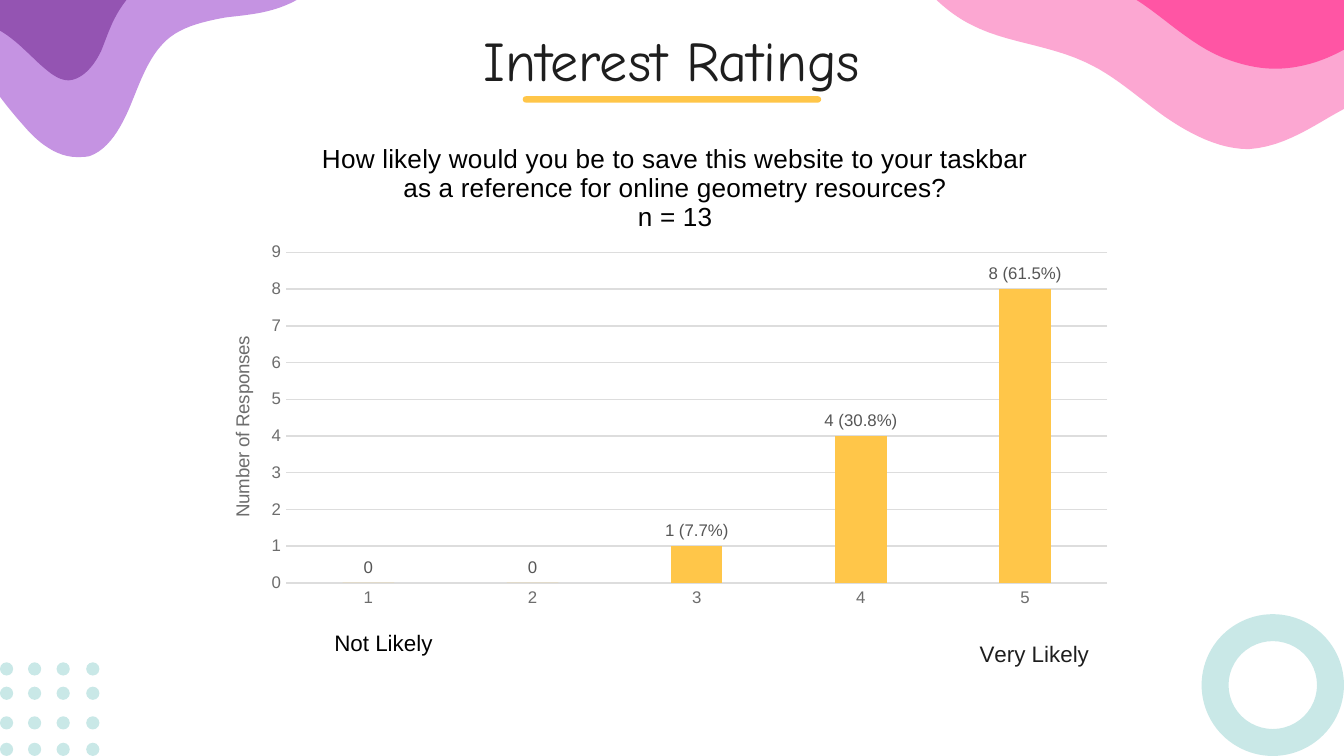
from lxml.etree import SubElement
from pptx import Presentation
from pptx.chart.data import CategoryChartData
from pptx.dml.color import RGBColor
from pptx.enum.chart import XL_CHART_TYPE as ChartType, XL_LABEL_POSITION as LabelPosition
from pptx.enum.chart import XL_TICK_MARK as TickMark
from pptx.enum.shapes import MSO_SHAPE as Shape
from pptx.enum.text import MSO_ANCHOR as Anchor, PP_ALIGN as Align
from pptx.oxml.ns import qn
from pptx.util import Cm, Pt

INK = RGBColor(0x1E, 0x1E, 0x1E)
BLACK = RGBColor(0, 0, 0)
AXIS_GRAY = RGBColor(0x6D, 0x6D, 0x6D)
LABEL_GRAY = RGBColor(0x56, 0x56, 0x56)
GRID_GRAY = RGBColor(0xDD, 0xDD, 0xDD)
YELLOW = RGBColor(0xFF, 0xC6, 0x49)
AQUA = RGBColor(0xC9, 0xE8, 0xE7)
LILAC = RGBColor(0xC5, 0x93, 0xE2)
PURPLE = RGBColor(0x94, 0x54, 0xB2)
LIGHT_PINK = RGBColor(0xFC, 0xA7, 0xD2)
PINK = RGBColor(0xFF, 0x55, 0xA4)


def style_font(font, size, color, name="Arial"):
    font.size, font.name, font.bold = Pt(size), name, False
    font.color.rgb = color


def place_chart_part(element, **fractions):
    layout = element.find(qn("c:layout"))
    if layout is None:
        layout = element.makeelement(qn("c:layout"))
        element.insert(0, layout)
    manual = SubElement(layout, qn("c:manualLayout"))
    if "w" in fractions:
        SubElement(manual, qn("c:layoutTarget")).set("val", "inner")
    for mode in ("xMode", "yMode"):
        SubElement(manual, qn(f"c:{mode}")).set("val", "edge")
    for name, fraction in fractions.items():
        SubElement(manual, qn(f"c:{name}")).set("val", str(fraction))


presentation = Presentation()
presentation.slide_width, presentation.slide_height = Cm(25.4), Cm(14.29)
slide = presentation.slides.add_slide(presentation.slide_layouts[5])
shapes = slide.shapes

# Each blob: colour, slide corner, point on the side edge, then Bezier triples.
blobs = [
    (LILAC, (0, 0), (0, 1.83), [
        (0.15, 2.03), (0.3, 2.21), (0.46, 2.39), (0.74, 2.72), (1.09, 2.97), (1.45, 2.97),
        (1.52, 2.97), (1.63, 2.97), (1.7, 2.95), (2.06, 2.82), (2.29, 2.41), (2.46, 2.01),
        (2.62, 1.63), (2.77, 1.17), (3.05, 0.86), (3.35, 0.51), (3.84, 0.41), (4.27, 0.33),
        (4.7, 0.28), (5.16, 0.25), (5.61, 0)]),
    (PURPLE, (0, 0), (0, 0.58), [
        (0.28, 0.74), (0.51, 0.99), (0.76, 1.22), (0.91, 1.35), (1.09, 1.52), (1.3, 1.52),
        (1.57, 1.5), (1.78, 1.24), (1.91, 0.97), (2.03, 0.69), (2.11, 0.36), (2.39, 0)]),
    (LIGHT_PINK, (25.4, 0), (25.4, 2.06), [
        (24.84, 2.36), (24.31, 2.77), (23.6, 2.82), (23.04, 2.82), (22.5, 2.54), (22.02, 2.21),
        (21.51, 1.85), (21.06, 1.42), (20.5, 1.17), (19.79, 0.84), (19, 0.81), (18.34, 0.46),
        (18.08, 0.33), (17.86, 0.15), (17.7, 0)]),
    (PINK, (25.4, 0), (25.4, 0.94), [
        (24.99, 1.17), (24.54, 1.3), (24.1, 1.3), (23.77, 1.3), (23.44, 1.22), (23.11, 1.09),
        (22.5, 0.84), (22, 0.33), (21.48, 0)]),
]
decorations = []
for color, corner, side, curve in blobs:
    outline = [side]
    for index in range(0, len(curve), 3):
        start = outline[-1]
        first, second, end = curve[index:index + 3]
        for step in range(1, 13):
            t = step / 12
            outline.append(tuple(
                (1 - t) ** 3 * a + 3 * (1 - t) ** 2 * t * b + 3 * (1 - t) * t ** 2 * c + t ** 3 * d
                for a, b, c, d in zip(start, first, second, end)))
    builder = shapes.build_freeform(Cm(corner[0]), Cm(corner[1]))
    builder.add_line_segments([(Cm(x), Cm(y)) for x, y in outline])
    decorations.append((builder.convert_to_shape(), color))

for left in (0, 0.53, 1.07, 1.63):
    for top in (12.52, 12.98, 13.54, 14.04):
        dot = shapes.add_shape(Shape.OVAL, Cm(left), Cm(top), Cm(0.25), Cm(0.25))
        decorations.append((dot, AQUA))

ring = shapes.add_shape(Shape.DONUT, Cm(22.71), Cm(11.61), Cm(2.69), Cm(2.68))
ring.adjustments[0] = 0.19
underline = shapes.add_shape(Shape.ROUNDED_RECTANGLE, Cm(9.88), Cm(1.82), Cm(5.64), Cm(0.12))
underline.adjustments[0] = 0.5
decorations += [(ring, AQUA), (underline, YELLOW)]
for shape, color in decorations:
    shape.shadow.inherit = False
    shape.fill.solid()
    shape.fill.fore_color.rgb = color
    shape.line.fill.background()

title = shapes.title
title.left, title.top, title.width, title.height = Cm(1.98), Cm(0.23), Cm(21.44), Cm(1.6)
title.text_frame.text = "Interest Ratings"
title.text_frame.vertical_anchor = Anchor.TOP
title.text_frame.margin_top = title.text_frame.margin_bottom = Cm(0.25)
title.text_frame.paragraphs[0].alignment = Align.CENTER
style_font(title.text_frame.paragraphs[0].runs[0].font, 30, INK, "Comic Neue")

chart_data = CategoryChartData()
chart_data.categories = ["1", "2", "3", "4", "5"]
chart_data.add_series("Series 1", (0, 0, 1, 4, 8))
chart = shapes.add_chart(ChartType.COLUMN_CLUSTERED, Cm(3.94), Cm(2.16), Cm(17.53), Cm(11.02),
                         chart_data).chart
style_font(chart.font, 10, INK)
chart.has_legend = False
place_chart_part(chart._chartSpace.chart.plotArea, x=0.084, y=0.237, w=0.885, h=0.567)

category_axis, value_axis = chart.category_axis, chart.value_axis
for axis in (category_axis, value_axis):
    axis.major_tick_mark = axis.minor_tick_mark = TickMark.NONE
    style_font(axis.tick_labels.font, 9, AXIS_GRAY)
value_axis.minimum_scale, value_axis.maximum_scale, value_axis.major_unit = 0, 9, 1
value_axis.format.line.fill.background()
for line in (category_axis.format.line, value_axis.major_gridlines.format.line):
    line.color.rgb = GRID_GRAY
    line.width = Pt(0.75)

question = "How likely would you be to save this website to your taskbar as a reference for online geometry resources?"
for chart_title, text, size, color, x, y in (
    (chart.chart_title, f"{question}\nn = 13", 14, BLACK, 0.118, 0.04),
    (category_axis.axis_title, "Very Likely", 12, INK, 0.827, 0.896),
    (value_axis.axis_title, "Number of Responses", 10, AXIS_GRAY, 0.02, 0.375),
):
    chart_title.text_frame.text = text
    for paragraph in chart_title.text_frame.paragraphs:
        style_font(paragraph.font, size, color)
        style_font(paragraph.runs[0].font, size, color)
    place_chart_part(chart_title._element, x=x, y=y)

plot = chart.plots[0]
plot.gap_width = 219
plot.vary_by_categories = False
series = plot.series[0]
series.format.fill.solid()
series.format.fill.fore_color.rgb = YELLOW
labels = series.data_labels
labels.show_value = True
labels.position = LabelPosition.OUTSIDE_END
style_font(labels.font, 9, LABEL_GRAY)
for index, text in ((2, "1 (7.7%)"), (3, "4 (30.8%)"), (4, "8 (61.5%)")):
    label = series.points[index].data_label
    label.text_frame.text = text
    label.position = LabelPosition.OUTSIDE_END
    style_font(label.text_frame.paragraphs[0].runs[0].font, 9, LABEL_GRAY)

not_likely = shapes.add_textbox(Cm(6.07), Cm(11.76), Cm(3.38), Cm(0.76))
not_likely.text_frame.word_wrap = True
not_likely.text_frame.text = "Not Likely"
style_font(not_likely.text_frame.paragraphs[0].runs[0].font, 12, BLACK)

presentation.save("out.pptx")
